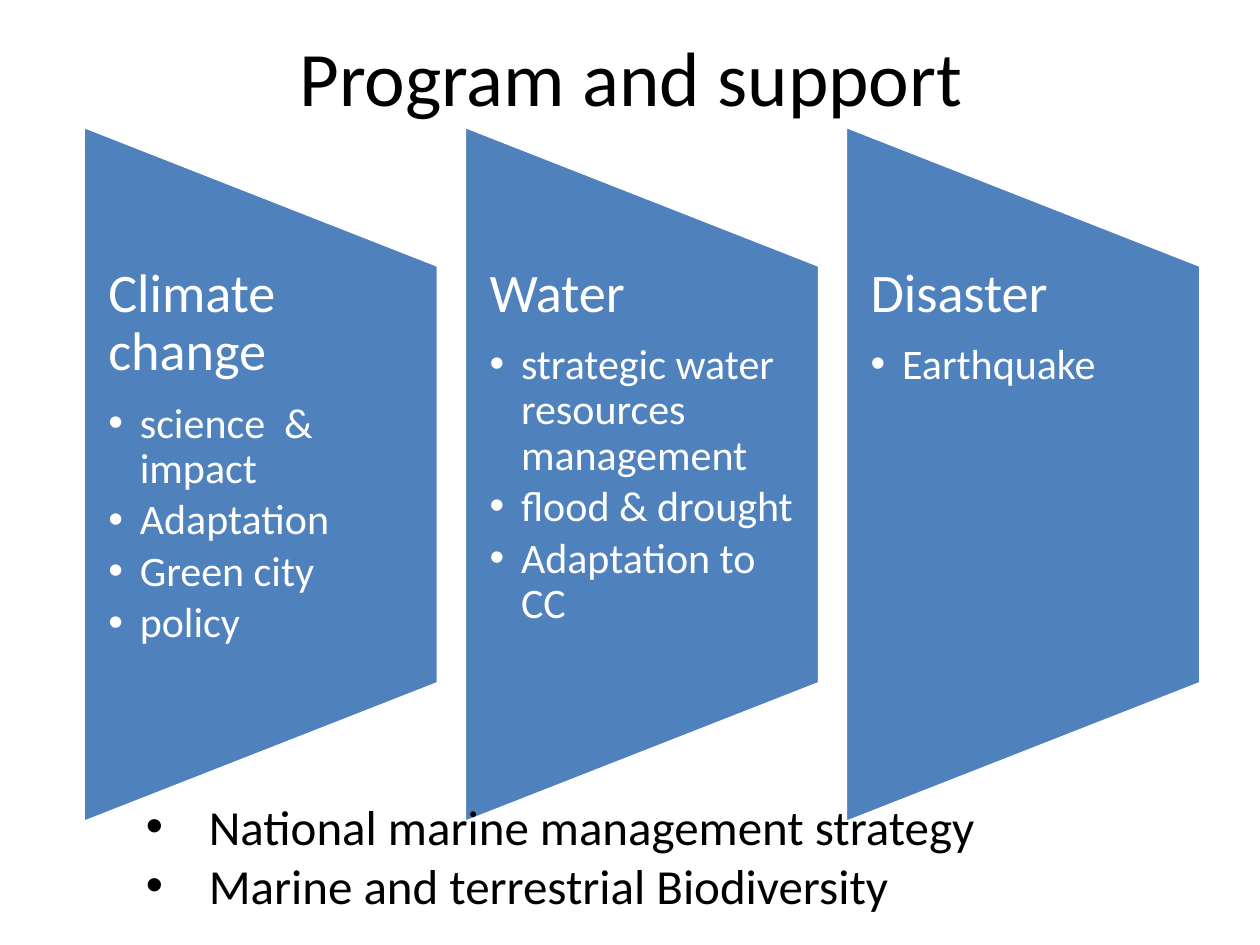
from lxml import etree
from pptx import Presentation
from pptx.dml.color import RGBColor
from pptx.enum import shapes, text
from pptx.oxml import ns
from pptx.util import Inches, Pt

FONT = "Calibri"
BLACK, WHITE, BLUE = "000000", "FFFFFF", "4F81BD"

PROGRAMS = [
    ("Climate change", ["science  & impact", "Adaptation", "Green city", "policy"]),
    ("Water", ["strategic water  resources management", "flood & drought",
               "Adaptation to  CC"]),
    ("Disaster", ["Earthquake"]),
]
SUPPORT = ["National marine management strategy",
           "Marine and terrestrial Biodiversity"]


def color(value):
    return RGBColor.from_string(value)


def write(paragraph, words, size, ink=BLACK, align=None, level=0,
          spacing=None, after=None, indent=None):
    """Fill a paragraph; an indent also gives it a hanging bullet."""
    run = paragraph.add_run()
    run.text = words
    run.font.name, run.font.size = FONT, Pt(size)
    run.font.color.rgb = color(ink)
    paragraph.level = level
    if align is not None:
        paragraph.alignment = align
    if spacing is not None:
        paragraph.line_spacing = spacing
    if after is not None:
        paragraph.space_after = Pt(after)
    if indent is not None:
        properties = paragraph._p.get_or_add_pPr()
        properties.set("marL", str(Inches(indent)))
        properties.set("indent", str(-Inches(indent)))
        bullet_font = etree.SubElement(properties, ns.qn("a:buFont"))
        bullet_font.set("typeface", "Arial")
        etree.SubElement(properties, ns.qn("a:buChar")).set("char", "•")


def add_frame(slide, left, top, width, height):
    frame = slide.shapes.add_textbox(
        Inches(left), Inches(top), Inches(width), Inches(height)).text_frame
    frame.word_wrap = True
    return frame


def add_title(slide, left, top, width, height):
    title = slide.shapes.title
    title.left, title.top = Inches(left), Inches(top)
    title.width, title.height = Inches(width), Inches(height)
    title.text_frame.vertical_anchor = text.MSO_ANCHOR.MIDDLE
    write(title.text_frame.paragraphs[0], "Program and support", 44,
          align=text.PP_ALIGN.CENTER)


def add_program(slide, left, top, width, height, heading, topics):
    # Panel: turned a quarter, so its own width is the height of the box
    panel = slide.shapes.add_shape(
        shapes.MSO_SHAPE.FLOWCHART_MANUAL_OPERATION,
        Inches(left + (width - height) / 2), Inches(top + (height - width) / 2),
        Inches(height), Inches(width))
    panel.rotation = 270
    panel.shadow.inherit = False
    panel.fill.solid()
    panel.fill.fore_color.rgb = color(BLUE)
    panel.line.color.rgb = color(WHITE)
    panel.line.width = Pt(2)

    # Heading and topics in the middle three fifths of the panel
    frame = add_frame(slide, left, top + height / 5, width, height * 3 / 5)
    frame.margin_left = frame.margin_right = Inches(0.2)
    frame.margin_top = frame.margin_bottom = 0
    write(frame.paragraphs[0], heading, 31, WHITE, spacing=0.9, after=11)
    for topic in topics:
        write(frame.add_paragraph(), topic, 24, WHITE, level=1,
              spacing=0.9, after=3.5, indent=0.25)


def add_programs(slide, left, top, width, height):
    panel_width = 2.82
    step = (width - panel_width) / (len(PROGRAMS) - 1)
    for column, (heading, topics) in enumerate(PROGRAMS):
        add_program(slide, left + column * step, top, panel_width, height,
                    heading, topics)


def add_support(slide, left, top, width, height):
    frame = add_frame(slide, left, top, width, height)
    for row, strategy in enumerate(SUPPORT):
        paragraph = frame.add_paragraph() if row else frame.paragraphs[0]
        write(paragraph, strategy, 28, indent=0.5)


def main():
    deck = Presentation()
    deck.slide_width, deck.slide_height = Inches(10), Inches(7.5)
    slide = deck.slides.add_slide(deck.slide_layouts.get_by_name("Title Only"))
    add_title(slide, 0.51, 0.13, 9, 0.94)
    add_programs(slide, 0.66, 1, 8.87, 5.53)
    add_support(slide, 1.06, 6.27, 8.27, 1.04)
    deck.save("out.pptx")


if __name__ == "__main__":
    main()
